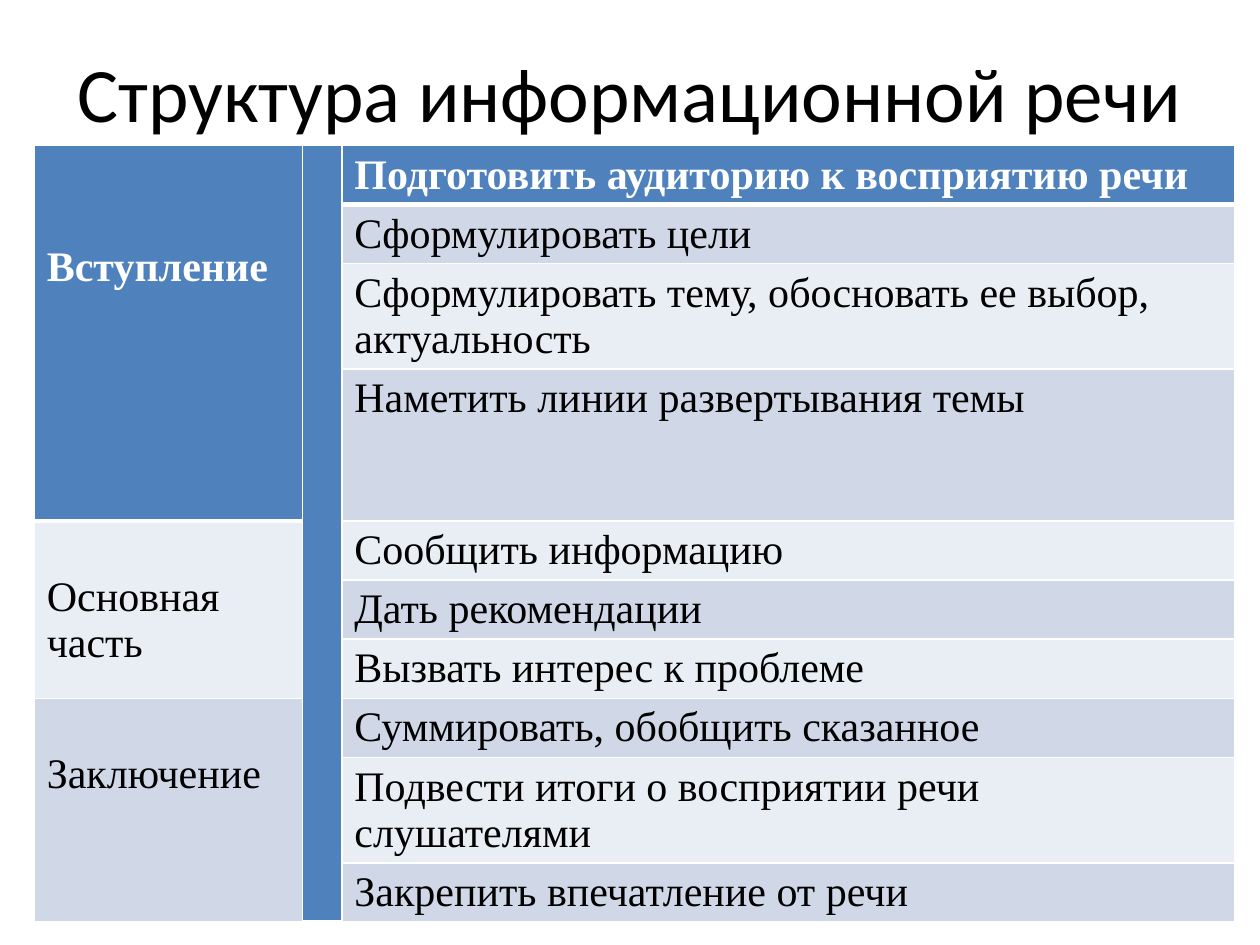
from dataclasses import dataclass

from lxml import etree
from pptx import Presentation
from pptx.dml.color import RGBColor
from pptx.enum.text import MSO_ANCHOR, PP_ALIGN
from pptx.oxml.ns import qn
from pptx.util import Cm, Pt

CENTER = PP_ALIGN.CENTER
MIDDLE = MSO_ANCHOR.MIDDLE
TITLE_ONLY = 5


@dataclass(frozen=True)
class Theme:
    heading_font: str = "Calibri"
    body_font: str = "Times New Roman"
    heading_size: int = 44
    body_size: int = 24
    text: str = "000000"
    white: str = "FFFFFF"
    header: str = "4F81BD"
    bands: tuple = ("E9EDF4", "D0D8E8")
    rule: float = 1
    header_rule: float = 3


THEME = Theme()

# Each part of the speech: name, space above the name (cm), its tasks
PARTS = [
    ("Вступление", 2.0, [
        "Подготовить аудиторию к восприятию речи",
        "Сформулировать цели",
        "Сформулировать тему, обосновать ее выбор, актуальность",
        "Наметить линии развертывания темы",
    ]),
    ("Основная часть", 1.07, [
        "Сообщить информацию",
        "Дать рекомендации",
        "Вызвать интерес к проблеме",
    ]),
    ("Заключение", 1.07, [
        "Суммировать, обобщить сказанное",
        "Подвести итоги о восприятии речи слушателями",
        "Закрепить впечатление от речи",
    ]),
]
COLUMN_WIDTHS = (5.41, 0.79, 18.01)
ROW_HEIGHT = 1.19
TALL_ROWS = {2: 2.12, 3: 3.06, 8: 2.12}


def style_font(font, name, size, color, bold=False):
    values = {"name": name, "size": Pt(size), "bold": bold}
    for attribute, value in values.items():
        setattr(font, attribute, value)
    font.color.rgb = RGBColor.from_string(color)


def add_borders(cell, bottom):
    properties = cell._tc.get_or_add_tcPr()
    widths = {"L": THEME.rule, "R": THEME.rule, "T": THEME.rule, "B": bottom}
    for side, width in widths.items():
        line = etree.SubElement(properties, qn(f"a:ln{side}"), w=str(Pt(width)))
        fill = etree.SubElement(line, qn("a:solidFill"))
        etree.SubElement(fill, qn("a:srgbClr"), val=THEME.white)


def fill_cell(cell, row, text="", header=False, space_above=None):
    add_borders(cell, THEME.header_rule if header else THEME.rule)
    cell.fill.solid()
    color = THEME.header if header else THEME.bands[row % 2]
    cell.fill.fore_color.rgb = RGBColor.from_string(color)
    if space_above is not None:
        cell.margin_top = Cm(space_above)
    if text:
        run = cell.text_frame.paragraphs[0].add_run()
        run.text = text
        style_font(run.font, THEME.body_font, THEME.body_size,
                   THEME.white if header else THEME.text, header)


def add_title(slide, text):
    title = slide.shapes.title
    place = {"left": 1.27, "top": 0.76, "width": 22.86, "height": 2.16}
    for attribute, value in place.items():
        setattr(title, attribute, Cm(value))
    frame = title.text_frame
    frame.vertical_anchor = MIDDLE
    frame.text = text
    paragraph = frame.paragraphs[0]
    paragraph.alignment = CENTER
    style_font(paragraph.runs[0].font, THEME.heading_font,
               THEME.heading_size, THEME.text)


def add_structure_table(slide):
    row_count = sum(len(tasks) for _, _, tasks in PARTS)
    heights = [TALL_ROWS.get(row, ROW_HEIGHT) for row in range(row_count)]
    table = slide.shapes.add_table(
        row_count, len(COLUMN_WIDTHS), Cm(0.69), Cm(2.93),
        Cm(sum(COLUMN_WIDTHS)), Cm(sum(heights))).table
    table.first_row = table.horz_banding = False
    for column, width in zip(table.columns, COLUMN_WIDTHS):
        column.width = Cm(width)
    for row, height in zip(table.rows, heights):
        row.height = Cm(height)

    # Separator column
    separator = table.cell(0, 1)
    separator.merge(table.cell(row_count - 1, 1))
    fill_cell(separator, 0, header=True)

    # Parts on the left, their tasks on the right
    start = 0
    for name, space_above, tasks in PARTS:
        part = table.cell(start, 0)
        part.merge(table.cell(start + len(tasks) - 1, 0))
        fill_cell(part, start, name, start == 0, space_above)
        for row, task in enumerate(tasks, start):
            fill_cell(table.cell(row, 2), row, task, row == 0)
        start += len(tasks)


def main():
    presentation = Presentation()
    presentation.slide_width = Cm(25.4)
    presentation.slide_height = Cm(19.05)
    slide = presentation.slides.add_slide(presentation.slide_layouts[TITLE_ONLY])
    add_title(slide, "Структура информационной речи")
    add_structure_table(slide)
    presentation.save("out.pptx")


if __name__ == "__main__":
    main()
